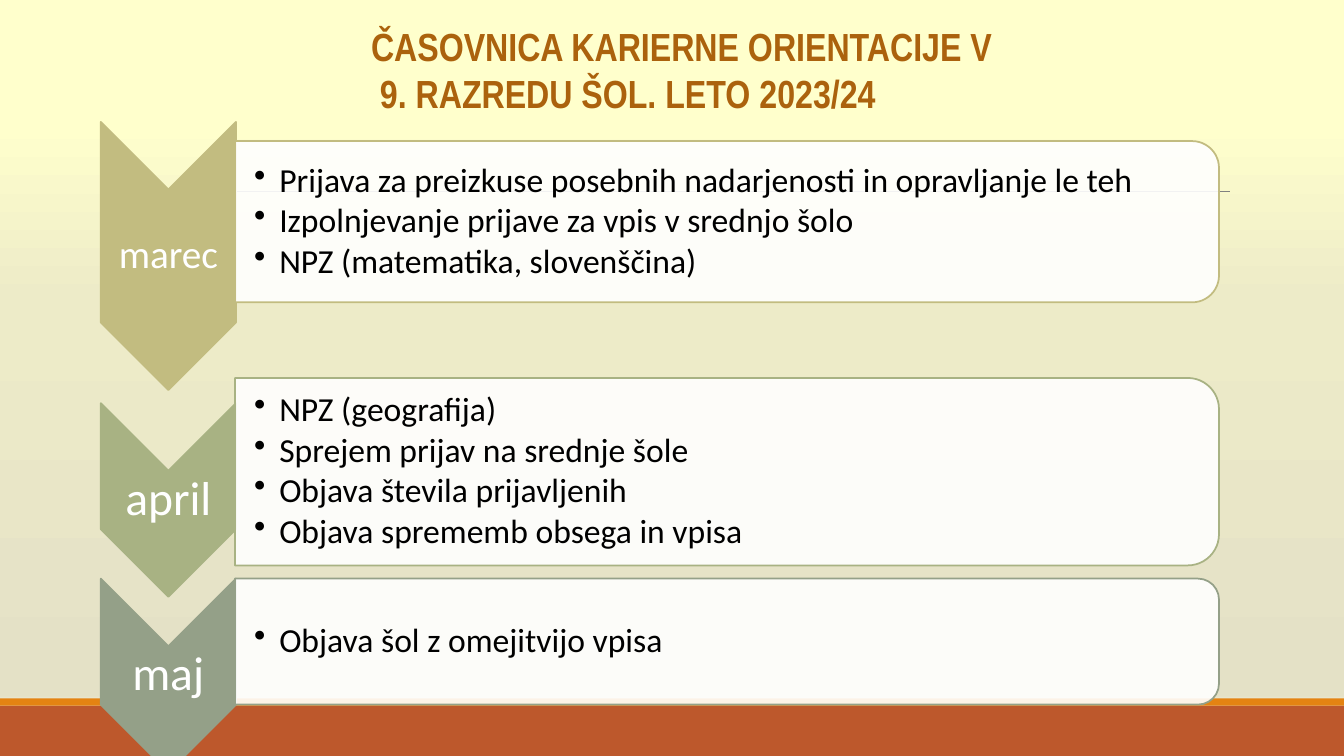
from lxml.etree import SubElement
from pptx import Presentation
from pptx.dml.color import RGBColor
from pptx.enum.shapes import MSO_CONNECTOR, MSO_SHAPE
from pptx.enum.text import MSO_ANCHOR, MSO_AUTO_SIZE, PP_ALIGN
from pptx.oxml import parse_xml
from pptx.oxml.ns import nsdecls, qn
from pptx.util import Inches, Pt

WIDTH, HEIGHT = 13.33, 7.5
COLORS = {"title": "AB620D", "white": "FFFFFF", "text": "000000", "rule": "808080",
          "footer": "BD582C", "stripe": "E48312",
          "marec": "C2BC80", "april": "A8B283", "maj": "94A088"}
GRADIENT = [(16, "FFFFCC"), (40, "EDEBC8"), (92, "E4E1C6"), (93, "EFEEDE"), (100, "EDEBD9")]
TITLE_LINES = ["ČASOVNICA KARIERNE ORIENTACIJE V", " 9. RAZREDU ŠOL. LETO 2023/24"]

CHEVRON_LEFT, CHEVRON_WIDTH = 1.0, 1.34
PANEL_LEFT, PANEL_WIDTH = 2.33, 9.76
# month, label size, (chevron top, height), (panel top, height), activities
MONTHS = [
    ("marec", 28, (1.21, 2.66), (1.4, 1.6),
     ["Prijava za preizkuse posebnih nadarjenosti in opravljanje le teh",
      "Izpolnjevanje prijave za vpis v srednjo šolo",
      "NPZ (matematika, slovenščina)"]),
    ("april", 34, (4.0, 1.92), (3.75, 1.86),
     ["NPZ (geografija)", "Sprejem prijav na srednje šole",
      "Objava števila prijavljenih", "Objava sprememb obsega in vpisa"]),
    ("maj", 34, (5.74, 1.92), (5.74, 1.25), ["Objava šol z omejitvijo vpisa"]),
]


def rgb(name):
    return RGBColor.from_string(COLORS[name])


def set_font(paragraph, name, size, color, bold=False):
    font = paragraph.font
    font.name, font.size, font.bold = name, Pt(size), bold
    font.color.rgb = rgb(color)


def add_filled(slide, preset, box, fill, line=None):
    shape = slide.shapes.add_shape(preset, *map(Inches, box))
    shape.shadow.inherit = False
    shape.fill.solid()
    shape.fill.fore_color.rgb = rgb(fill)
    if line:
        shape.line.color.rgb = rgb(line)
        shape.line.width = Pt(1.25)
    else:
        shape.line.fill.background()
    return shape


def add_turned(slide, preset, box, fill, line):
    """Add a shape turned by 90 degrees that covers the given box."""
    left, top, width, height = box
    shift = (width - height) / 2
    shape = add_filled(slide, preset, (left + shift, top - shift, height, width), fill, line)
    shape.rotation = 90
    return shape


def add_text(slide, box, lines, left_inset=0.02):
    frame = slide.shapes.add_textbox(*map(Inches, box)).text_frame
    frame.word_wrap = True
    frame.vertical_anchor = MSO_ANCHOR.MIDDLE
    frame.margin_left = Inches(left_inset)
    frame.margin_right = frame.margin_top = frame.margin_bottom = Inches(0.02)
    frame.text = "\n".join(lines)
    for paragraph in frame.paragraphs:
        paragraph.line_spacing = 0.9
    return frame.paragraphs


def add_bullet(paragraph):
    properties = paragraph._p.get_or_add_pPr()
    properties.set("marL", str(Inches(0.25)))
    properties.set("indent", str(-Inches(0.25)))
    SubElement(properties, qn("a:buChar")).set("char", "•")


def add_backdrop(slide):
    stops = "".join(f'<a:gs pos="{position * 1000}"><a:srgbClr val="{color}"/></a:gs>'
                    for position, color in GRADIENT)
    slide.background.fill.solid()
    properties = slide._element.cSld.find(qn("p:bg")).find(qn("p:bgPr"))
    properties.replace(properties[0], parse_xml(
        f'<a:gradFill {nsdecls("a")} rotWithShape="1"><a:gsLst>{stops}</a:gsLst>'
        '<a:lin ang="5400000" scaled="0"/></a:gradFill>'))
    rule = slide.shapes.add_connector(MSO_CONNECTOR.STRAIGHT, Inches(1.3), Inches(1.9),
                                      Inches(12.2), Inches(1.9))
    rule.line.color.rgb = rgb("rule")
    rule.line.width = Pt(0.5)
    SubElement(rule._element.spPr, qn("a:effectLst"))
    add_filled(slide, MSO_SHAPE.RECTANGLE, (0, 7, WIDTH, 0.5), "footer")
    add_filled(slide, MSO_SHAPE.RECTANGLE, (0, 6.93, WIDTH, 0.07), "stripe")


def add_title(slide, box):
    title = slide.shapes.title
    title.left, title.top, title.width, title.height = map(Inches, box)
    frame = title.text_frame
    frame.text = "\n".join(TITLE_LINES)
    frame.word_wrap = True
    frame.auto_size = MSO_AUTO_SIZE.NONE
    frame.vertical_anchor = MSO_ANCHOR.TOP
    for paragraph in frame.paragraphs:
        paragraph.alignment = PP_ALIGN.LEFT
        set_font(paragraph, "Arial Narrow", 28, "title", bold=True)


def add_chevron(slide, box, month, size):
    left, top, width, height = box
    add_turned(slide, MSO_SHAPE.CHEVRON, box, month, month)
    label = add_text(slide, (left, top + width / 2, width, height - width), [month])[0]
    label.alignment = PP_ALIGN.CENTER
    set_font(label, "Calibri", size, "white")


def add_panel(slide, box, month, activities):
    panel = add_turned(slide, MSO_SHAPE.ROUND_2_SAME_RECTANGLE, box, "white", month)
    color = panel._element.spPr.find(qn("a:solidFill"))[0]
    SubElement(color, qn("a:alpha")).set("val", "90000")
    for paragraph in add_text(slide, box, activities, left_inset=0.19):
        paragraph.space_after = Pt(3)
        add_bullet(paragraph)
        set_font(paragraph, "Calibri", 24, "text")


def main():
    presentation = Presentation()
    presentation.slide_width, presentation.slide_height = Inches(WIDTH), Inches(HEIGHT)
    slide = presentation.slides.add_slide(presentation.slide_layouts[5])
    add_backdrop(slide)
    add_title(slide, (3.58, 0.17, 7.83, 1.04))
    for month, size, (chevron_top, chevron_height), (panel_top, panel_height), activities in MONTHS:
        add_chevron(slide, (CHEVRON_LEFT, chevron_top, CHEVRON_WIDTH, chevron_height), month, size)
        add_panel(slide, (PANEL_LEFT, panel_top, PANEL_WIDTH, panel_height), month, activities)
    presentation.save("out.pptx")


if __name__ == "__main__":
    main()
